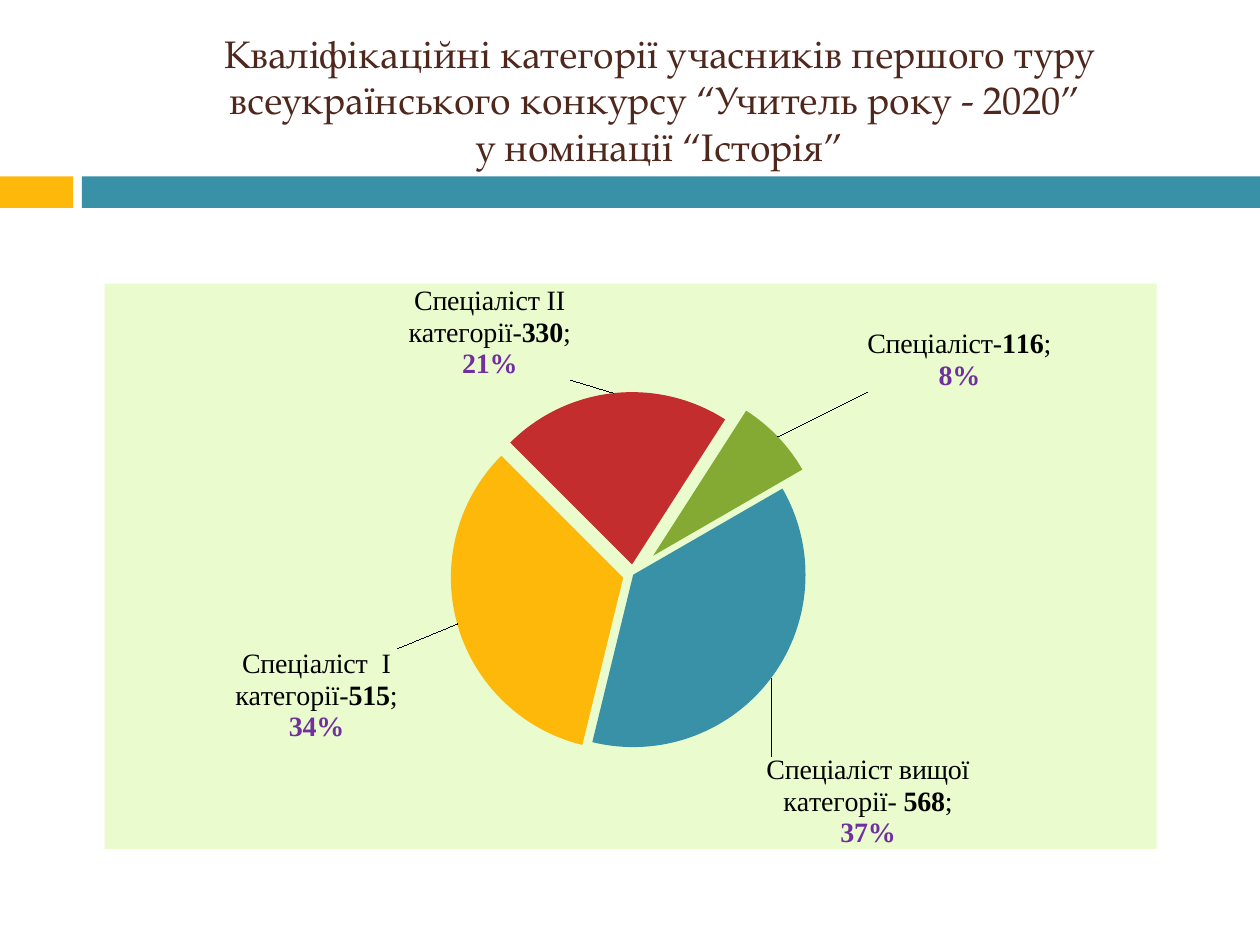
from lxml import etree
from pptx import Presentation
from pptx import util as u
from pptx.chart.data import CategoryChartData
from pptx.dml.color import RGBColor
from pptx.enum import chart as charts, shapes, text
from pptx.oxml import parse_xml
from pptx.oxml.ns import nsdecls, qn

COLORS = {
    "teal": "3891A7", "gold": "FEB80A", "red": "C32D2E", "green": "84AA33",
    "lime": "BBF65C", "brown": "4F271C", "purple": "7030A0", "black": "000000",
}
TITLE = ("Кваліфікаційні категорії учасників першого туру "
         "всеукраїнського конкурсу “Учитель року - 2020” \vу номінації “Історія”")
SERIES_EXPLOSION = 6
# category, dash, value, percent, color, explosion, label offset
SLICES = [
    ("Спеціаліст вищої категорії", "- ", 568, "37%", "teal", 0, (-0.01, 0.13)),
    ("Спеціаліст  І категорії", "-", 515, "34%", "gold", 6, (-0.05, 0.04)),
    ("Спеціаліст ІІ категорії", "-", 330, "21%", "red", 6, (-0.04, -0.01)),
    ("Спеціаліст", "-", 116, "8%", "green", 16, (0.08, -0.07)),
]


def rgb(name):
    return RGBColor.from_string(COLORS[name])


def style_font(font, name, size, color, bold=False):
    font.name = name
    font.size = u.Pt(size)
    font.color.rgb = rgb(color)
    font.bold = bold


def add_bar(slide, left, width, color):
    shape = slide.shapes.add_shape(
        shapes.MSO_SHAPE.RECTANGLE,
        u.Inches(left), u.Inches(1.4), u.Inches(width), u.Inches(0.25))
    shape.shadow.inherit = False
    shape.fill.solid()
    shape.fill.fore_color.rgb = rgb(color)
    shape.line.fill.background()


def add_title(slide):
    box = slide.shapes.add_textbox(
        u.Inches(0.67), u.Inches(0.25), u.Inches(9.13), u.Inches(1.08))
    frame = box.text_frame
    frame.word_wrap = True
    frame.vertical_anchor = text.MSO_ANCHOR.MIDDLE
    frame.text = TITLE
    paragraph = frame.paragraphs[0]
    paragraph.alignment = text.PP_ALIGN.CENTER
    for run in paragraph.runs:
        style_font(run.font, "TeX Gyre Pagella", 22, "brown")


def chart_value(tag, value):
    return parse_xml(f'<c:{tag} {nsdecls("c")} val="{value}"/>')


def manual_layout(**settings):
    layout = parse_xml(f'<c:layout {nsdecls("c")}><c:manualLayout/></c:layout>')
    for tag, value in settings.items():
        etree.SubElement(layout[0], qn(f"c:{tag}")).set("val", str(value))
    return layout


def fill_chart_area(chart_space):
    area = parse_xml(
        f'<c:spPr {nsdecls("c", "a")}><a:solidFill><a:srgbClr val="{COLORS["lime"]}">'
        '<a:alpha val="30000"/></a:srgbClr></a:solidFill>'
        '<a:ln><a:noFill/></a:ln></c:spPr>')
    chart_space.find(qn("c:chart")).addnext(area)


def place_plot(chart_space):
    plot_area = chart_space.find(f'{qn("c:chart")}/{qn("c:plotArea")}')
    for layout in plot_area.findall(qn("c:layout")):
        plot_area.remove(layout)
    plot_area.insert(0, manual_layout(
        layoutTarget="inner", xMode="edge", yMode="edge",
        x=0.168, y=0.192, w=0.669, h=0.646))
    pie = plot_area.find(qn("c:pieChart"))
    for angle in pie.findall(qn("c:firstSliceAng")):
        pie.remove(angle)
    pie.append(chart_value("firstSliceAng", 60))


def write_label(point, category, dash, value, percent):
    label = point.data_label
    frame = label.text_frame
    first, second = frame.paragraphs[0], frame.add_paragraph()
    pieces = [(first, category + dash, "black", False),
              (first, str(value), "black", True),
              (first, ";", "black", False),
              (second, percent, "purple", True)]
    for paragraph, words, color, bold in pieces:
        run = paragraph.add_run()
        run.text = words
        style_font(run.font, "Times New Roman", 16, color, bold)
    label.position = charts.XL_LABEL_POSITION.BEST_FIT


def format_slices(chart, chart_space):
    series = chart.plots[0].series[0]
    labels = series.data_labels
    labels.show_value = labels.show_percentage = labels.show_category_name = True
    labels.position = charts.XL_LABEL_POSITION.BEST_FIT
    style_font(labels.font, "Times New Roman", 16, "black")
    for index, (category, dash, value, percent, color, _, _) in enumerate(SLICES):
        point = series.points[index]
        point.format.fill.solid()
        point.format.fill.fore_color.rgb = rgb(color)
        write_label(point, category, dash, value, percent)

    points = list(chart_space.iter(qn("c:dPt")))
    label_elements = list(chart_space.iter(qn("c:dLbl")))
    points[0].addprevious(chart_value("explosion", SERIES_EXPLOSION))
    for point, label, (*_, explosion, (x, y)) in zip(points, label_elements, SLICES):
        point.find(qn("c:spPr")).addprevious(chart_value("explosion", explosion))
        label.find(qn("c:idx")).addnext(manual_layout(x=x, y=y))


def add_pie(slide):
    data = CategoryChartData()
    data.categories = [row[0] for row in SLICES]
    data.add_series("Series 1", [row[2] for row in SLICES])
    chart = slide.shapes.add_chart(
        charts.XL_CHART_TYPE.PIE, u.Inches(0.83), u.Inches(2.25),
        u.Inches(8.35), u.Inches(4.49), data).chart
    chart.has_title = False
    chart.has_legend = False
    style_font(chart.font, "Calibri", 10, "black")
    chart_space = chart.element if hasattr(chart, "element") else chart._chartSpace
    fill_chart_area(chart_space)
    place_plot(chart_space)
    format_slices(chart, chart_space)


def main():
    presentation = Presentation()
    presentation.slide_width = u.Inches(10)
    presentation.slide_height = u.Inches(7.5)
    slide = presentation.slides.add_slide(presentation.slide_layouts[6])
    add_bar(slide, 0, 0.58, "gold")
    add_bar(slide, 0.65, 9.35, "teal")
    add_title(slide)
    add_pie(slide)
    presentation.save("out.pptx")


if __name__ == "__main__":
    main()
